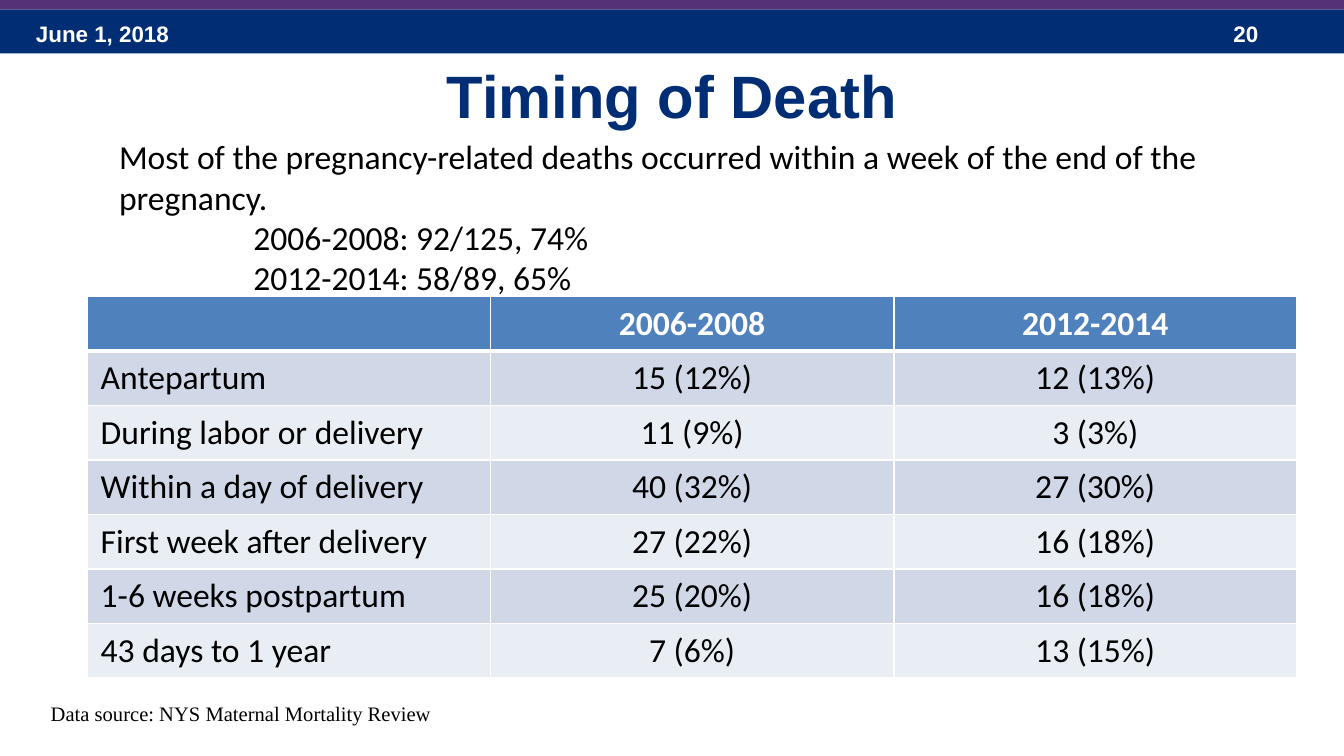
from lxml import etree
from pptx import Presentation
from pptx.dml.color import RGBColor
from pptx.enum.shapes import MSO_SHAPE
from pptx.enum.text import MSO_ANCHOR, PP_ALIGN
from pptx.oxml.ns import qn
from pptx.util import Cm, Pt

RECTANGLE = MSO_SHAPE.RECTANGLE
TOP, MIDDLE = MSO_ANCHOR.TOP, MSO_ANCHOR.MIDDLE
LEFT, CENTER = PP_ALIGN.LEFT, PP_ALIGN.CENTER

DATE = "June 1, 2018"
PAGE = "20"
TITLE = "Timing of Death"
SUMMARY = [
    "Most of the pregnancy-related deaths occurred within a week of the end of the pregnancy.",
    "\t2006-2008: 92/125, 74%",
    "\t2012-2014: 58/89, 65%",
]
DEATHS = [
    ("", "2006-2008", "2012-2014"),
    ("Antepartum", "15 (12%)", "12 (13%)"),
    ("During labor or delivery", "11 (9%)", "3 (3%)"),
    ("Within a day of delivery", "40 (32%)", "27 (30%)"),
    ("First week after delivery", "27 (22%)", "16 (18%)"),
    ("1-6 weeks postpartum", "25 (20%)", "16 (18%)"),
    ("43 days to 1 year", "7 (6%)", "13 (15%)"),
]
SOURCE = "Data source: NYS Maternal Mortality Review"

THEME = {
    "navy": "002D73", "purple": "553278", "white": "FFFFFF", "black": "000000",
    "header": "4F81BD", "bands": ("D0D8E8", "E9EDF4"),
    # font, size, colour, bold
    "bar_text": ("Arial", 12, "FFFFFF", True),
    "title_text": ("Arial", 32, "002D73", True),
    "body_text": ("Calibri", 18, "000000", False),
    "header_text": ("Calibri", 18, "FFFFFF", True),
    "source_text": ("Times New Roman", 11, "000000", False),
}

SLIDE_W, SLIDE_H = Cm(25.4), Cm(14.28)
COLUMN_W, ROW_H = Cm(7.62), Cm(1.03)
TAB_STOP = Cm(2.54)


def style_text(frame, style, align=LEFT):
    font_name, size, colour, bold = style
    for paragraph in frame.paragraphs:
        paragraph.alignment = align
        font = paragraph.font
        font.name, font.size, font.bold = font_name, Pt(size), bold
        font.color.rgb = RGBColor.from_string(colour)
        for run in paragraph.runs:
            run.font.name, run.font.size, run.font.bold = font_name, Pt(size), bold
            run.font.color.rgb = RGBColor.from_string(colour)


def add_bar(slide, top, height, colour):
    bar = slide.shapes.add_shape(RECTANGLE, 0, top, SLIDE_W, height)
    bar.shadow.inherit = False
    bar.fill.solid()
    bar.fill.fore_color.rgb = RGBColor.from_string(colour)
    bar.line.fill.background()


def add_text(slide, text, box, style, align=LEFT, anchor=TOP, wrap=True):
    frame = slide.shapes.add_textbox(*map(Cm, box)).text_frame
    frame.word_wrap = wrap
    frame.vertical_anchor = anchor
    frame.text = text
    for paragraph in frame.paragraphs:
        if paragraph.text.startswith("\t"):
            tabs = etree.SubElement(paragraph._p.get_or_add_pPr(), qn("a:tabLst"))
            etree.SubElement(tabs, qn("a:tab"), pos=str(TAB_STOP), algn="l")
    style_text(frame, style, align)


def set_borders(cell, bottom_width):
    """Draw white borders; they must precede the cell fill in the XML."""
    properties = cell._tc.get_or_add_tcPr()
    widths = {"lnL": 1, "lnR": 1, "lnT": 1, "lnB": bottom_width}
    for side, width in widths.items():
        line = etree.SubElement(properties, qn(f"a:{side}"), w=str(Pt(width)))
        fill = etree.SubElement(line, qn("a:solidFill"))
        etree.SubElement(fill, qn("a:srgbClr"), val=THEME["white"])


def add_deaths_table(slide, left, top):
    row_count, column_count = len(DEATHS), len(DEATHS[0])
    table = slide.shapes.add_table(
        row_count, column_count, left, top,
        COLUMN_W * column_count, ROW_H * row_count).table
    for column in table.columns:
        column.width = COLUMN_W
    for row_index, values in enumerate(DEATHS):
        table.rows[row_index].height = ROW_H
        is_header = row_index == 0
        colour = THEME["header"] if is_header else THEME["bands"][(row_index - 1) % 2]
        style = THEME["header_text" if is_header else "body_text"]
        for column_index, value in enumerate(values):
            cell = table.cell(row_index, column_index)
            set_borders(cell, 3 if is_header else 1)
            # The first body row shares its top edge with the header's thick rule.
            if row_index == 1:
                cell._tc.tcPr.find(qn("a:lnT")).set("w", str(Pt(3)))
            cell.fill.solid()
            cell.fill.fore_color.rgb = RGBColor.from_string(colour)
            cell.text_frame.text = value
            style_text(cell.text_frame, style, CENTER if column_index else LEFT)


def main():
    deck = Presentation()
    deck.slide_width, deck.slide_height = SLIDE_W, SLIDE_H
    slide = deck.slides.add_slide(deck.slide_layouts[6])

    add_bar(slide, Cm(0.18), Cm(0.83), THEME["navy"])
    add_text(slide, DATE, (0.43, 0.25, 5.92, 0.76), THEME["bar_text"])
    add_text(slide, PAGE, (23.06, 0.25, 1.9, 0.76), THEME["bar_text"])
    add_bar(slide, Cm(-0.05), Cm(0.23), THEME["purple"])
    add_text(slide, TITLE, (1.27, 0.6, 22.86, 2.39), THEME["title_text"], CENTER, MIDDLE)
    add_deaths_table(slide, Cm(1.65), Cm(5.6))
    add_text(slide, "\n".join(SUMMARY), (2, 2.45, 22.12, 4.11), THEME["body_text"])
    add_text(slide, SOURCE, (0.71, 13.11, 7.72, 0.74), THEME["source_text"], wrap=False)

    deck.save("out.pptx")


if __name__ == "__main__":
    main()
